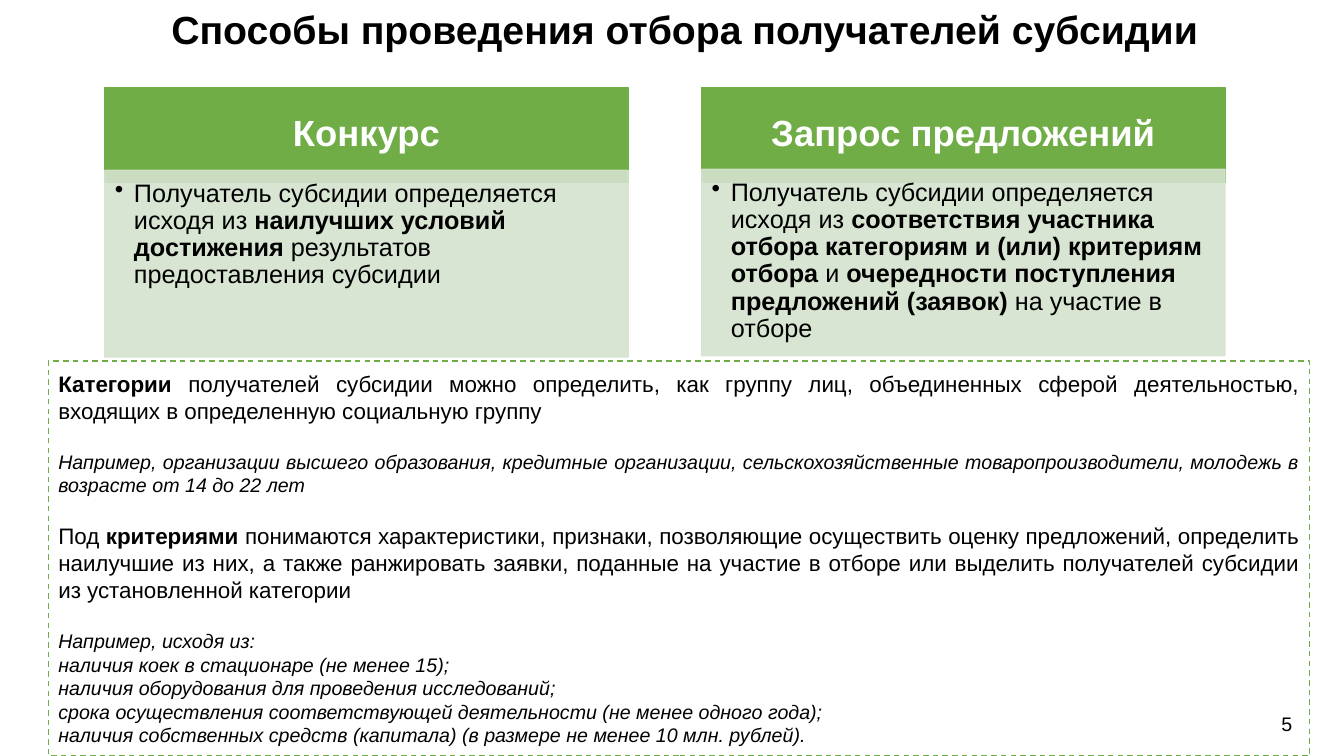
from lxml import etree
from pptx import Presentation
from pptx.dml.color import RGBColor
from pptx.enum.dml import MSO_LINE
from pptx.enum.shapes import MSO_SHAPE
from pptx.enum.text import MSO_ANCHOR, PP_ALIGN
from pptx.oxml.ns import qn
from pptx.util import Inches, Pt

COLORS = {"green": "70AD47", "pale": "D5E3CF", "white": "FFFFFF", "black": "000000"}
DEFAULT_INSETS = (0.1, 0.05, 0.1, 0.05)

METHODS = [
    ("Конкурс", 1.69, [
        ("Получатель субсидии определяется исходя из ", False),
        ("наилучших условий достижения", True),
        (" результатов предоставления субсидии", False),
    ]),
    ("Запрос предложений", 1.68, [
        ("Получатель субсидии определяется исходя из ", False),
        ("соответствия участника отбора категориям и (или) критериям отбора ", True),
        ("и ", False),
        ("очередности поступления предложений (заявок) ", True),
        ("на участие в отборе", False),
    ]),
]

DEFINITIONS = [
    ([("Категории ", True),
      ("получателей субсидии можно определить, как группу лиц, объединенных сферой "
       "деятельностью, входящих в определенную социальную группу", False)],
     ["Например, организации высшего образования, кредитные организации, "
      "сельскохозяйственные товаропроизводители, молодежь в возрасте от 14 до 22 лет"]),
    ([("Под ", False), ("критериями ", True),
      ("понимаются характеристики, признаки, позволяющие осуществить оценку предложений, "
       "определить наилучшие из них, а также ранжировать заявки, поданные на участие в отборе "
       "или выделить получателей субсидии из установленной категории", False)],
     ["Например, исходя из:",
      "наличия коек в стационаре (не менее 15); ",
      "наличия оборудования для проведения исследований;",
      "срока осуществления соответствующей деятельности (не менее одного года);",
      "наличия собственных средств (капитала) (в размере не менее 10 млн. рублей)."]),
]


def write_text(paragraph, text, size=18, color="black", bold=False, italic=False,
               align=PP_ALIGN.LEFT, line_spacing=1.0, space_before=0):
    paragraph.alignment = align
    paragraph.line_spacing = line_spacing
    paragraph.space_before = Pt(space_before)
    pieces = [(text, bold)] if isinstance(text, str) else text
    for words, is_bold in pieces:
        run = paragraph.add_run()
        run.text = words
        run.font.name = "Arial"
        run.font.size = Pt(size)
        run.font.bold = is_bold
        run.font.italic = italic
        run.font.color.rgb = RGBColor.from_string(COLORS[color])


def prepare_frame(shape, anchor, insets=DEFAULT_INSETS):
    frame = shape.text_frame
    frame.word_wrap = True
    frame.vertical_anchor = anchor
    frame.margin_left, frame.margin_top, frame.margin_right, frame.margin_bottom = map(Inches, insets)
    return frame


def add_label(slide, box, text, anchor=MSO_ANCHOR.TOP, **text_format):
    shape = slide.shapes.add_textbox(*map(Inches, box))
    write_text(prepare_frame(shape, anchor).paragraphs[0], text, **text_format)


def add_panel(slide, box, fill, line, opacity=100):
    shape = slide.shapes.add_shape(MSO_SHAPE.RECTANGLE, *map(Inches, box))
    shape.shadow.inherit = False
    shape.fill.solid()
    shape.fill.fore_color.rgb = RGBColor.from_string(COLORS[fill])
    shape.line.color.rgb = RGBColor.from_string(COLORS[line])
    shape.line.width = Pt(1)
    if opacity < 100:
        for color in shape._element.spPr.iter(qn("a:srgbClr")):
            etree.SubElement(color, qn("a:alpha")).set("val", str(opacity * 1000))
    return shape


def add_bullet(paragraph, indent):
    properties = paragraph._p.get_or_add_pPr()
    properties.set("marL", str(Inches(indent)))
    properties.set("indent", str(-Inches(indent)))
    etree.SubElement(properties, qn("a:buChar")).set("char", "•")


def add_method(slide, box, body_top, heading, description):
    left, top, width, height = box
    header = add_panel(slide, (left, top, width, 0.94), "green", "green")
    frame = prepare_frame(header, MSO_ANCHOR.MIDDLE, (0.2, 0.12, 0.2, 0.12))
    write_text(frame.paragraphs[0], heading, size=26, color="white", bold=True,
               align=PP_ALIGN.CENTER, line_spacing=0.9)

    body = add_panel(slide, (left, body_top, width, height), "pale", "pale", opacity=90)
    frame = prepare_frame(body, MSO_ANCHOR.TOP, (0.1, 0.1, 0.14, 0.16))
    write_text(frame.paragraphs[0], description, line_spacing=0.9)
    add_bullet(frame.paragraphs[0], 0.19)


def add_definitions(slide, box):
    panel = add_panel(slide, box, "white", "green")
    panel.line.dash_style = MSO_LINE.DASH
    frame = prepare_frame(panel, MSO_ANCHOR.MIDDLE)
    gap = 18.4
    for index, (definition, examples) in enumerate(DEFINITIONS):
        paragraph = frame.add_paragraph() if index else frame.paragraphs[0]
        write_text(paragraph, definition, size=16, align=PP_ALIGN.JUSTIFY,
                   space_before=gap if index else 0)
        for position, example in enumerate(examples):
            write_text(frame.add_paragraph(), example, size=14, italic=True,
                       align=PP_ALIGN.JUSTIFY, space_before=0 if position else gap)


def main():
    presentation = Presentation()
    presentation.slide_width = Inches(13.33)
    presentation.slide_height = Inches(7.5)
    slide = presentation.slides.add_slide(presentation.slide_layouts[6])

    add_label(slide, (1.04, -0.41, 11.5, 1.45), "Способы проведения отбора получателей субсидии",
              anchor=MSO_ANCHOR.MIDDLE, size=28, bold=True, align=PP_ALIGN.CENTER, line_spacing=0.9)
    for column, (heading, body_top, description) in enumerate(METHODS):
        add_method(slide, (1.04 + column * 5.92, 0.87, 5.19, 1.85), body_top, heading, description)
    add_definitions(slide, (0.48, 3.58, 12.51, 3.92))
    add_label(slide, (12.61, 7.01, 0.38, 0.34), "5", size=14)

    presentation.save("out.pptx")


if __name__ == "__main__":
    main()
